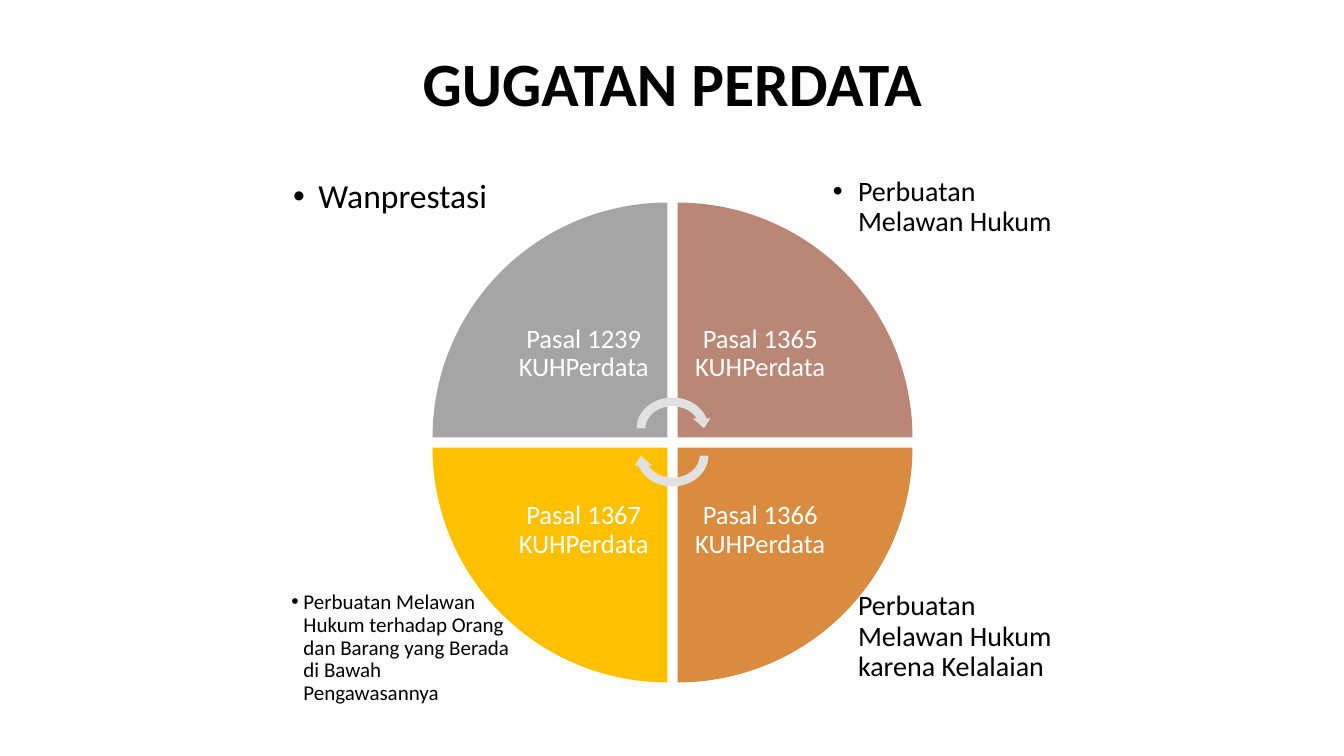
from lxml import etree
from pptx import Presentation
from pptx.dml.color import RGBColor
from pptx.enum import shapes, text
from pptx.oxml import ns
from pptx.util import Inches, Pt


def add_element(parent, tag, **attributes):
    return etree.SubElement(parent, ns.qn(tag), attributes)


def write(shape, words, size, color, inset, **formats):
    """Fill a shape with one Calibri paragraph; formats are paragraph attributes."""
    frame = shape.text_frame
    frame.word_wrap = True
    for side in ("left", "top", "right", "bottom"):
        setattr(frame, f"margin_{side}", Inches(inset))
    para = frame.paragraphs[0]
    for name, value in {"line_spacing": 0.9, **formats}.items():
        setattr(para, name, value)
    span = para.add_run()
    span.text = words
    span.font.name, span.font.size = "Calibri", Pt(size)
    span.font.color.rgb = RGBColor.from_string(color)
    return para, span


deck = Presentation()
deck.slide_width, deck.slide_height = Inches(13.33), Inches(7.5)
page = deck.slides.add_slide(deck.slide_layouts[5])
center = text.PP_ALIGN.CENTER

# Title with a soft text shadow
title = page.shapes.title
title.left, title.top, title.width, title.height = map(Inches, (0.92, 0.13, 11.5, 1.45))
title.text_frame.vertical_anchor = text.MSO_ANCHOR.MIDDLE
para, span = write(title, "GUGATAN PERDATA", 44, "000000", 0.1, alignment=center)
span.font.bold = True
effects = etree.Element(ns.qn("a:effectLst"))
shadow = add_element(effects, "a:outerShdw", blurRad="38100", dist="38100", dir="2700000")
shadow_color = add_element(shadow, "a:srgbClr", val="000000")
add_element(shadow_color, "a:alpha", val="43000")
span.font.fill._xPr.find(ns.qn("a:solidFill")).addnext(effects)

# Clockwise from top left: column, row, colour, article, claim, size, indent, inset
quarters = [
    (0, 0, "A5A5A5", "Pasal 1239 KUHPerdata", "Wanprestasi", 24, 0.25, 0.1),
    (1, 0, "BA8676", "Pasal 1365 KUHPerdata", "Perbuatan Melawan Hukum", 20, 0.25, 0.08),
    (1, 1, "D98B3F", "Pasal 1366 KUHPerdata",
     "Perbuatan Melawan Hukum karena Kelalaian", 20, 0.25, 0.08),
    (0, 1, "FFC000", "Pasal 1367 KUHPerdata",
     "Perbuatan Melawan Hukum terhadap Orang dan Barang yang Berada di Bawah Pengawasannya",
     15, 0.12, 0.08),
]

# Plain shapes: kind, left, top, width, height, rotation, colour
kinds = shapes.MSO_SHAPE
panels = [(kinds.ROUNDED_RECTANGLE, 2.77 + 4.32 * column, 1.63 + 3.66 * row, 3.47, 1.85, 0, "FFFFFF")
          for column, row, *_ in quarters]
wedges = [(kinds.PIE_WEDGE, 4.29 + 2.43 * column, 2.01 + 2.43 * row, 2.33, 2.33, 90 * turn, color)
          for turn, (column, row, color, *_) in enumerate(quarters)]
arrows = [(kinds.CIRCULAR_ARROW, 6.27, top, 0.8, 0.7, turn, "E1E1E1")
          for top, turn in ((3.9, 0), (4.17, 180))]

for kind, left, top, width, height, turn, color in panels + wedges + arrows:
    shape = page.shapes.add_shape(kind, *map(Inches, (left, top, width, height)))
    shape.rotation = turn
    shape.shadow.inherit = False
    shape.fill.solid()
    shape.fill.fore_color.rgb = RGBColor.from_string(color)
    shape.line.fill.background()
    if kind == kinds.ROUNDED_RECTANGLE:
        shape.adjustments[0] = 0.1
    if kind == kinds.PIE_WEDGE and turn == 0:
        first_wedge = shape

# Bulleted claims sit behind the wheel
for column, row, _, _, claim, size, indent, inset in quarters:
    box = page.shapes.add_textbox(*map(Inches, (2.81 + 5.37 * column, 1.68 + 4.11 * row, 2.35, 1.3)))
    para, span = write(box, claim, size, "000000", inset)
    properties = para._p.get_or_add_pPr()
    properties.set("marL", str(Inches(indent)))
    properties.set("indent", str(-Inches(indent)))
    add_element(properties, "a:buFont", typeface="Arial")
    add_element(properties, "a:buChar", char="•")
    first_wedge._element.addprevious(box._element)

# Article labels lie towards the centre of the wheel
for column, row, _, article, *_ in quarters:
    box = page.shapes.add_textbox(*map(Inches, (4.97 + 1.75 * column, 2.69 + 1.75 * row, 1.64, 1.64)))
    box.text_frame.vertical_anchor = text.MSO_ANCHOR.MIDDLE
    write(box, article, 19, "FFFFFF", 0.15, alignment=center)

deck.save("out.pptx")
